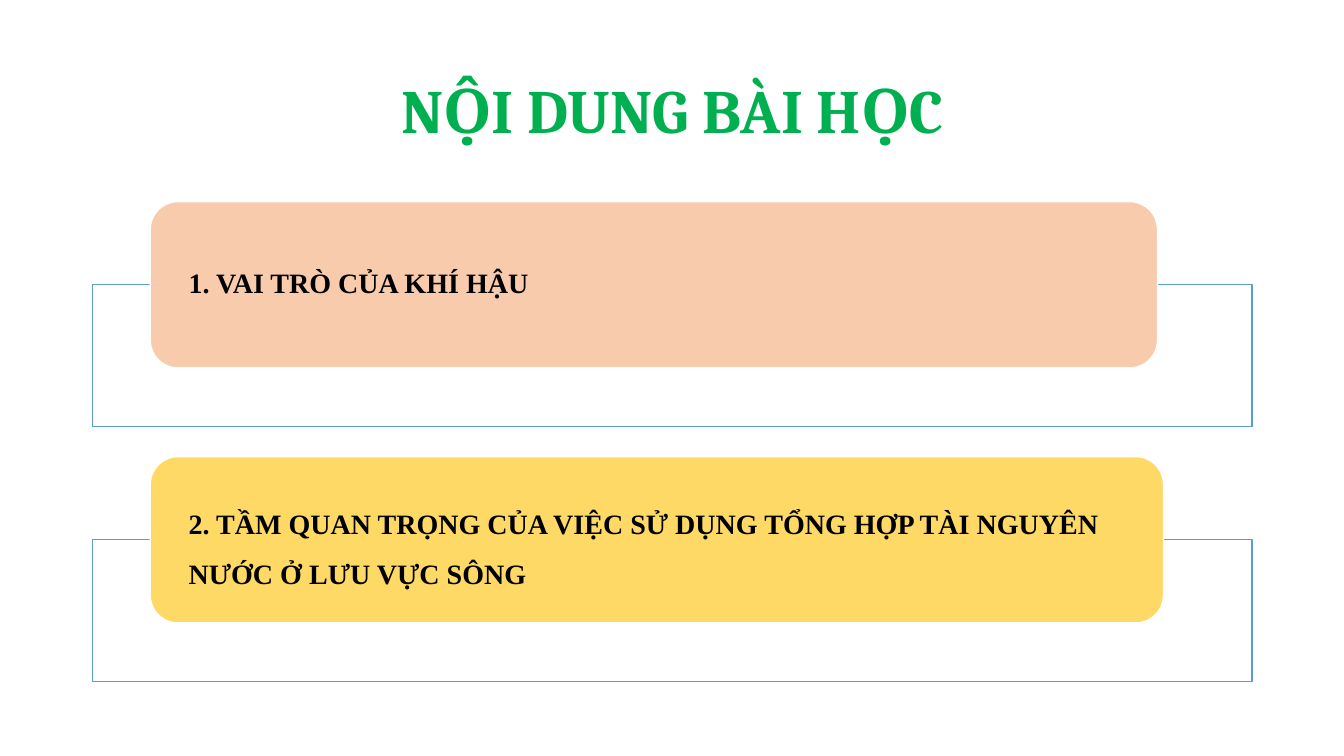
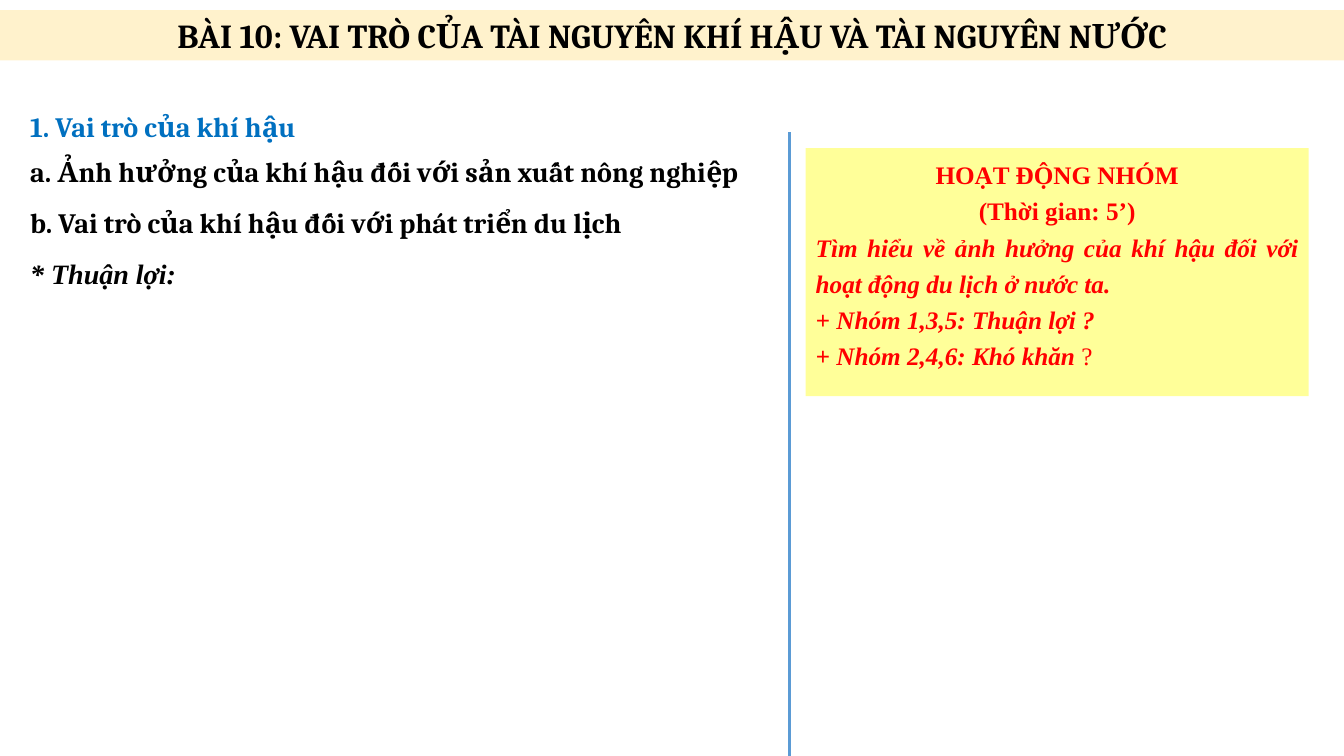
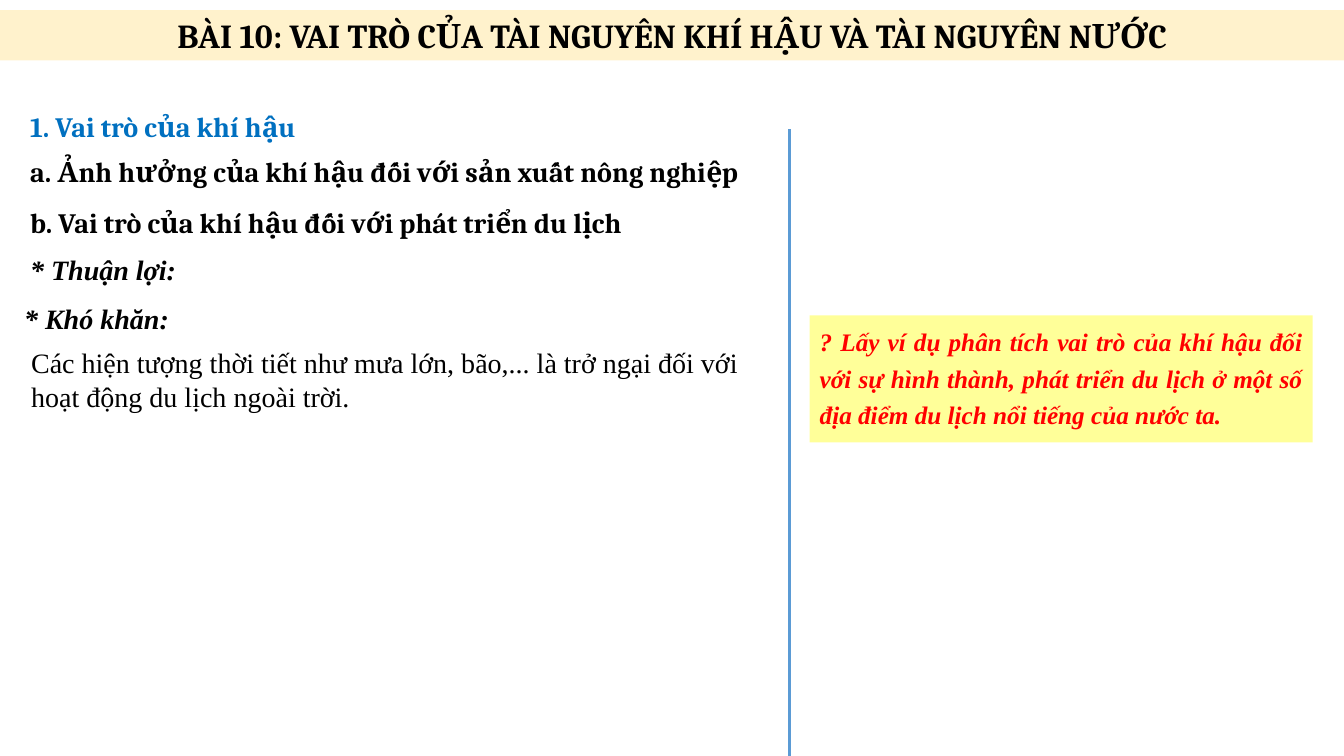
from dataclasses import dataclass

from lxml import etree
from pptx import Presentation
from pptx import util as u
from pptx.dml.color import RGBColor
from pptx.enum import shapes, text
from pptx.oxml.ns import qn

PX = 9144
W, H = 1333, 750
LEFT, CENTER, JUSTIFY = (text.PP_ALIGN.LEFT, text.PP_ALIGN.CENTER,
                         text.PP_ALIGN.JUSTIFY)
TOP, MIDDLE = text.MSO_ANCHOR.TOP, text.MSO_ANCHOR.MIDDLE


@dataclass(frozen=True)
class Theme:
    """Colours, fonts and type sizes of the deck."""
    white: str = "FFFFFF"
    ink: str = "000000"
    green: str = "00B050"
    heading: str = "0070C0"
    line: str = "5B9BD5"
    red: str = "FF0000"
    note: str = "FFFF99"
    banner: str = "FFF2CC"
    peach: str = "F8CBAD"
    gold: str = "FFD966"
    serif: str = "Cambria"
    roman: str = "Times New Roman"
    big: int = 44
    band: int = 24
    main: int = 20
    small: int = 18


T = Theme()


def px(*lengths):
    """Turn px into EMU."""
    return [u.Emu(n * PX) for n in lengths]


def rgb(code):
    """Turn a hex code into a colour."""
    return RGBColor.from_string(code)


def place(sp, box):
    """Move a shape to a box."""
    for name, value in zip(("left", "top", "width", "height"), px(*box)):
        setattr(sp, name, value)
    return sp


def write(sp, paras, color=T.ink, font=T.roman, size=T.main, anchor=TOP,
          align=LEFT, spacing=1.0, inset=10, inset_y=5, **style):
    """Fill a shape with paragraphs, each a list of runs or (runs, format)."""
    tf = sp.text_frame
    side, edge = px(inset, inset_y)
    frame = dict(word_wrap=True, auto_size=text.MSO_AUTO_SIZE.NONE,
                 vertical_anchor=anchor, margin_left=side, margin_right=side,
                 margin_top=edge, margin_bottom=edge)
    for name, value in frame.items():
        setattr(tf, name, value)
    for i, (runs, own) in enumerate(paras):
        p = tf.add_paragraph() if i else tf.paragraphs[0]
        layout = dict(alignment=own.get("align", align), line_spacing=spacing,
                      space_before=u.Pt(0), space_after=u.Pt(0))
        for name, value in layout.items():
            setattr(p, name, value)
        for words, change in runs:
            r = p.add_run()
            r.text = words
            look = dict(name=font, size=u.Pt(size), bold=True, italic=False)
            look |= style | own.get("style", {}) | change
            for name, value in look.items():
                setattr(r.font, name, value)
            r.font.color.rgb = rgb(color)
    return sp


def para(words, align=LEFT, **style):
    """Make a paragraph of one run."""
    return [(words, {})], dict(align=align, style=style)


def panel(s, kind, box, fill, line=None):
    """Add a filled preset shape."""
    sp = s.shapes.add_shape(kind, *px(*box))
    sp.shadow.inherit = False
    sp.fill.solid()
    sp.fill.fore_color.rgb = rgb(fill)
    if line:
        sp.line.color.rgb = rgb(line)
        sp.line.width = u.Pt(1)
    else:
        sp.line.fill.background()
    return sp


def label(s, box, words, **fmt):
    """Add a text box of one paragraph."""
    return write(s.shapes.add_textbox(*px(*box)), [para(words)], **fmt)


def divider(s, x, top, bottom):
    """Draw the vertical rule between the columns."""
    c = s.shapes.add_connector(shapes.MSO_CONNECTOR.STRAIGHT,
                               *px(x, top, x, bottom))
    c.line.color.rgb = rgb(T.line)
    c.line.width = u.Pt(2.25)
    etree.SubElement(c._element.spPr, qn("a:effectLst"))


def topic(s, box, words, fill, width, spacing):
    """Draw an outlined frame with a rounded topic card over its top edge."""
    x, y, w, h = box
    panel(s, shapes.MSO_SHAPE.RECTANGLE, (x, y + 82, w, h - 82),
          T.white, T.line)
    card = panel(s, shapes.MSO_SHAPE.ROUNDED_RECTANGLE,
                 (x + 57, y, width, 165), fill, T.white)
    write(card, [para(words)], anchor=MIDDLE, spacing=spacing,
          inset=30, inset_y=0)


def note(s, box, paras):
    """Turn the body placeholder into a yellow task card."""
    sp = place(s.placeholders[1], box)
    sp.fill.solid()
    sp.fill.fore_color.rgb = rgb(T.note)
    write(sp, paras, color=T.red, size=T.small, spacing=1.2)
    for p in sp.text_frame.paragraphs:
        pPr = p._p.get_or_add_pPr()
        pPr.set("marL", "0")
        pPr.set("indent", "0")
        etree.SubElement(pPr, qn("a:buNone"))


def contents_slide(prs):
    """Build the list of lesson topics."""
    s = prs.slides.add_slide(prs.slide_layouts[5])
    write(place(s.shapes.title, (92, 40, 1150, 145)),
          [para("NỘI DUNG BÀI HỌC")], color=T.green, font=T.serif,
          size=T.big, anchor=MIDDLE, align=CENTER, spacing=0.9)
    s.shapes.title.text_frame.paragraphs[0].alignment = CENTER
    topics = (("1. VAI TRÒ CỦA KHÍ HẬU", T.peach, 999, 0.9),
              ("2. TẦM QUAN TRỌNG CỦA VIỆC SỬ DỤNG TỔNG HỢP TÀI NGUYÊN "
               "NƯỚC Ở LƯU VỰC SÔNG", T.gold, 1005, 1.5))
    for i, item in enumerate(topics):
        topic(s, (92, 200 + 253 * i, 1150, 223), *item)


def lesson_slide(prs, rule_top, points_top, note_box, note_paras):
    """Build a lesson slide: banner, headings, rule and task card."""
    s = prs.slides.add_slide(prs.slide_layouts[1])
    band = panel(s, shapes.MSO_SHAPE.RECTANGLE, (0, 10, W, 50), T.banner)
    write(band, [para("BÀI 10: VAI TRÒ CỦA TÀI NGUYÊN KHÍ HẬU VÀ TÀI NGUYÊN "
                      "NƯỚC", CENTER)],
          font=T.serif, size=T.band, anchor=MIDDLE)
    fmt = dict(font=T.serif, anchor=MIDDLE, spacing=0.9)
    label(s, (20, 101, 763, 53), "1. Vai trò của khí hậu",
          color=T.heading, **fmt)
    label(s, (20, 146, 763, 53),
          "a. Ảnh hưởng của khí hậu đối với sản xuất nông nghiệp", **fmt)
    write(place(s.shapes.title, (20, 196, 763, 53)),
          [para("b. Vai trò của khí hậu đối với phát triển du lịch")], **fmt)
    label(s, (20, points_top, 763, 44), "* Thuận lợi:", italic=True)
    divider(s, 783, rule_top, H)
    note(s, note_box, note_paras)
    return s


def advantages_slide(prs):
    """Build the group activity slide."""
    lesson_slide(prs, 131, 250, (799, 147, 499, 246), [
        para("HOẠT ĐỘNG NHÓM", CENTER),
        para("(Thời gian: 5’)", CENTER),
        para("Tìm hiểu về ảnh hưởng của khí hậu đối với hoạt động du lịch "
             "ở nước ta.", JUSTIFY, italic=True),
        para("+ Nhóm 1,3,5: Thuận lợi ?", JUSTIFY, italic=True),
        ([("+ Nhóm 2,4,6: Khó khăn ", dict(italic=True)),
          ("?", dict(bold=False))], dict(align=JUSTIFY))])


def difficulties_slide(prs):
    """Build the slide on difficulties."""
    s = lesson_slide(prs, 128, 246, (803, 313, 499, 126), [
        para("? Lấy ví dụ phân tích vai trò của khí hậu đối với sự hình "
             "thành, phát triển du lịch ở một số địa điểm du lịch nổi tiếng "
             "của nước ta.", JUSTIFY, italic=True)])
    label(s, (14, 294, 763, 44), "* Khó khăn:", italic=True)
    label(s, (21, 338, 762, 77),
          "Các hiện tượng thời tiết như mưa lớn, bão,... là trở ngại đối với "
          "hoạt động du lịch ngoài trời.", bold=False)


def main():
    """Build and save the deck."""
    prs = Presentation()
    prs.slide_width, prs.slide_height = px(W, H)
    for build in (contents_slide, advantages_slide, difficulties_slide):
        build(prs)
    prs.save("out.pptx")


if __name__ == "__main__":
    main()
